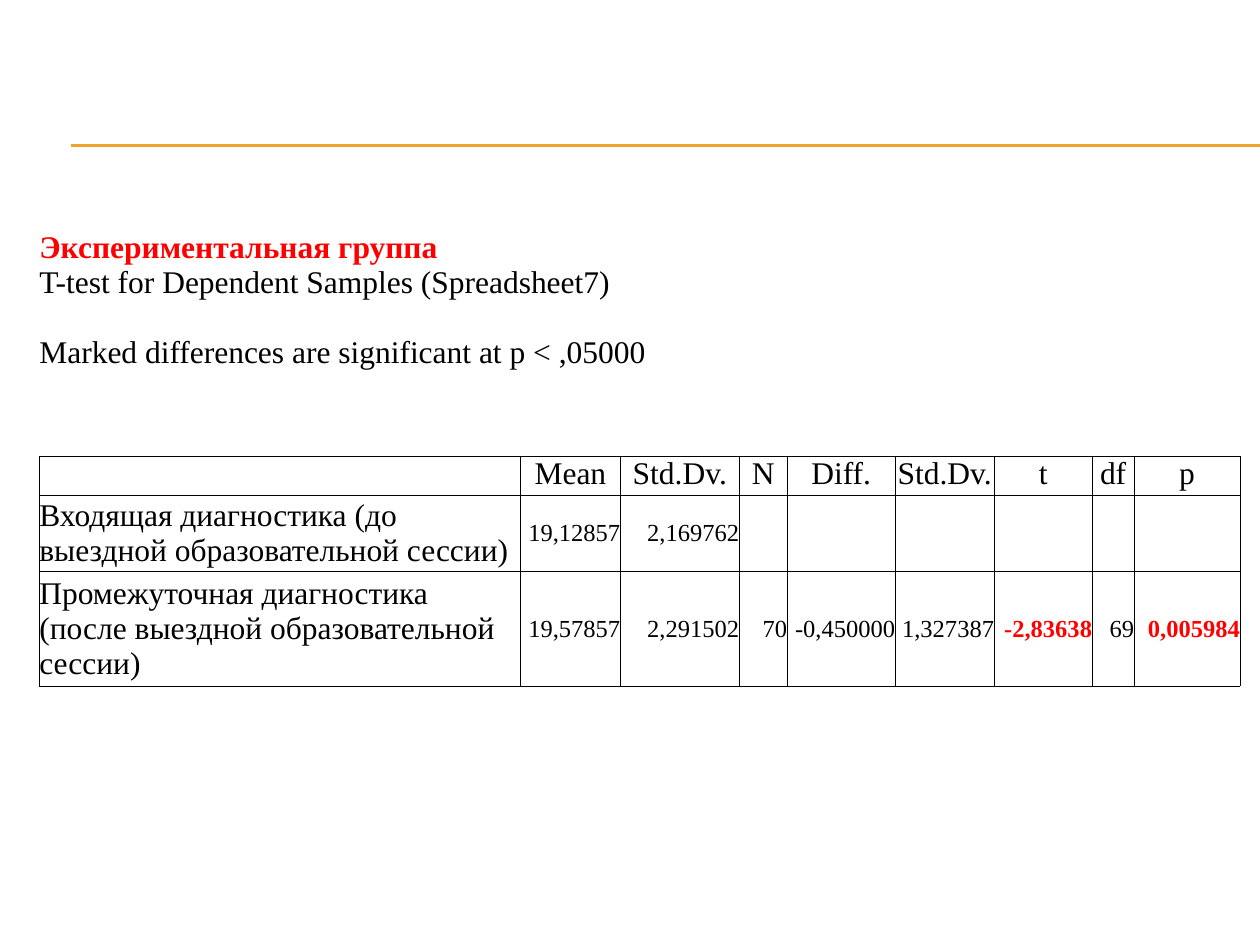
from dataclasses import dataclass

from lxml import etree
from pptx import Presentation
from pptx.dml.color import RGBColor
from pptx.enum.shapes import MSO_CONNECTOR
from pptx.enum.text import MSO_ANCHOR, PP_ALIGN
from pptx.oxml.ns import qn
from pptx.slide import Slide
from pptx.util import Pt

LEFT, CENTER, RIGHT = PP_ALIGN.LEFT, PP_ALIGN.CENTER, PP_ALIGN.RIGHT
TOP, MIDDLE, BOTTOM = MSO_ANCHOR.TOP, MSO_ANCHOR.MIDDLE, MSO_ANCHOR.BOTTOM
STRAIGHT = MSO_CONNECTOR.STRAIGHT

COLORS = {"text": "000000", "accent": "FF0000", "rule": "F0A22E", "border": "000000"}
FONT = "Times New Roman"
LABEL_SIZE, VALUE_SIZE = 18, 14
ROW_UNIT = 21.8
ROW_LINES = [1, 3, 1, 1, 1, 2, 3]
COLUMN_WIDTHS = [275, 57, 11, 57, 27.4, 6.5, 55.3, 56.5, 56, 24, 60.5]
HEADER_ROW = 4
FIELD_COLUMNS = [0, 1, 2, 4, 5, 7, 8, 9, 10]
MERGES = [(0, 1, 2), (0, 4, 5), (1, 0, 6)] + [
    (row, first, first + 1) for row in range(2, 7) for first in (2, 5)
]
SIGNIFICANT = ("-2,83638", "0,005984")
HEADINGS = ["", "Mean", "Std.Dv.", "N", "Diff.", "Std.Dv.", "t", "df", "p"]
RESULTS = [
    ["Входящая диагностика (до выездной образовательной сессии)",
     "19,12857", "2,169762"],
    ["Промежуточная диагностика (после выездной образовательной сессии)",
     "19,57857", "2,291502", "70", "-0,450000", "1,327387", "-2,83638", "69", "0,005984"],
]


@dataclass
class SlideBuilder:
    slide: Slide
    font: str
    colors: dict

    def rule(self, left, right, y):
        rule = self.slide.shapes.add_connector(STRAIGHT, Pt(left), Pt(y), Pt(right), Pt(y))
        rule.line.color.rgb = RGBColor.from_string(self.colors["rule"])
        rule.line.width = Pt(0.75)
        properties = rule._element.spPr
        etree.SubElement(properties, qn("a:effectLst"))

    def table(self, left, top, widths, heights, merges):
        table = self.slide.shapes.add_table(
            len(heights), len(widths), Pt(left), Pt(top), Pt(sum(widths)), Pt(sum(heights))
        ).table
        table.first_row = table.horz_banding = False
        for column, width in zip(table.columns, widths):
            column.width = Pt(width)
        for row, height in zip(table.rows, heights):
            row.height = Pt(height)
        for row, first, last in merges:
            table.cell(row, first).merge(table.cell(row, last))
        return table

    def cell_frame(self, cell, sides):
        margins = dict.fromkeys(
            ("margin_left", "margin_right", "margin_top", "margin_bottom"), 0)
        for name, value in margins.items():
            setattr(cell, name, value)
        properties = cell._tc.get_or_add_tcPr()
        for side in "LRTB":
            border = etree.SubElement(properties, qn(f"a:ln{side}"), w=str(Pt(0.5)))
            if side in sides:
                fill = etree.SubElement(border, qn("a:solidFill"))
                etree.SubElement(fill, qn("a:srgbClr"), val=self.colors["border"])
            else:
                etree.SubElement(border, qn("a:noFill"))
        cell.fill.background()

    def cell_text(self, cell, lines, size=LABEL_SIZE, align=LEFT, anchor=TOP,
                  color="text", bold=False, gap=0):
        cell.vertical_anchor = anchor
        style = {"name": self.font, "size": Pt(size), "bold": bold}
        frame = cell.text_frame
        for index, line in enumerate(lines):
            paragraph = frame.add_paragraph() if index else frame.paragraphs[0]
            paragraph.alignment = align
            if index:
                paragraph.space_before = Pt(gap)
            run = paragraph.add_run()
            run.text = line
            for name, value in style.items():
                setattr(run.font, name, value)
            run.font.color.rgb = RGBColor.from_string(self.colors[color])


def main():
    deck = Presentation()
    deck.slide_width, deck.slide_height = Pt(720), Pt(540)
    builder = SlideBuilder(deck.slides.add_slide(deck.slide_layouts[6]), FONT, COLORS)

    for y in (82.8, 83.5):
        builder.rule(40.5, 720, y)

    heights = [ROW_UNIT * lines for lines in ROW_LINES]
    t_test = builder.table(22.5, 129.6, COLUMN_WIDTHS, heights, MERGES)
    for row in range(len(heights)):
        sides = "LRTB" if row >= HEADER_ROW else "B" if row == HEADER_ROW - 1 else ""
        for column in range(len(COLUMN_WIDTHS)):
            builder.cell_frame(t_test.cell(row, column), sides)

    builder.cell_text(t_test.cell(0, 0), ["Экспериментальная группа"],
                      anchor=BOTTOM, color="accent", bold=True)
    builder.cell_text(t_test.cell(1, 0),
                      ["T-test for Dependent Samples (Spreadsheet7)",
                       "Marked differences are significant at p < ,05000"], gap=20)
    for column, heading in zip(FIELD_COLUMNS, HEADINGS):
        if heading:
            builder.cell_text(t_test.cell(HEADER_ROW, column), [heading], align=CENTER)
    for row, (stage, *values) in enumerate(RESULTS, HEADER_ROW + 1):
        builder.cell_text(t_test.cell(row, 0), [stage], anchor=MIDDLE)
        for column, value in zip(FIELD_COLUMNS[1:], values):
            marked = value in SIGNIFICANT
            builder.cell_text(t_test.cell(row, column), [value], VALUE_SIZE, RIGHT, MIDDLE,
                              "accent" if marked else "text", marked)

    deck.save("out.pptx")


if __name__ == "__main__":
    main()
